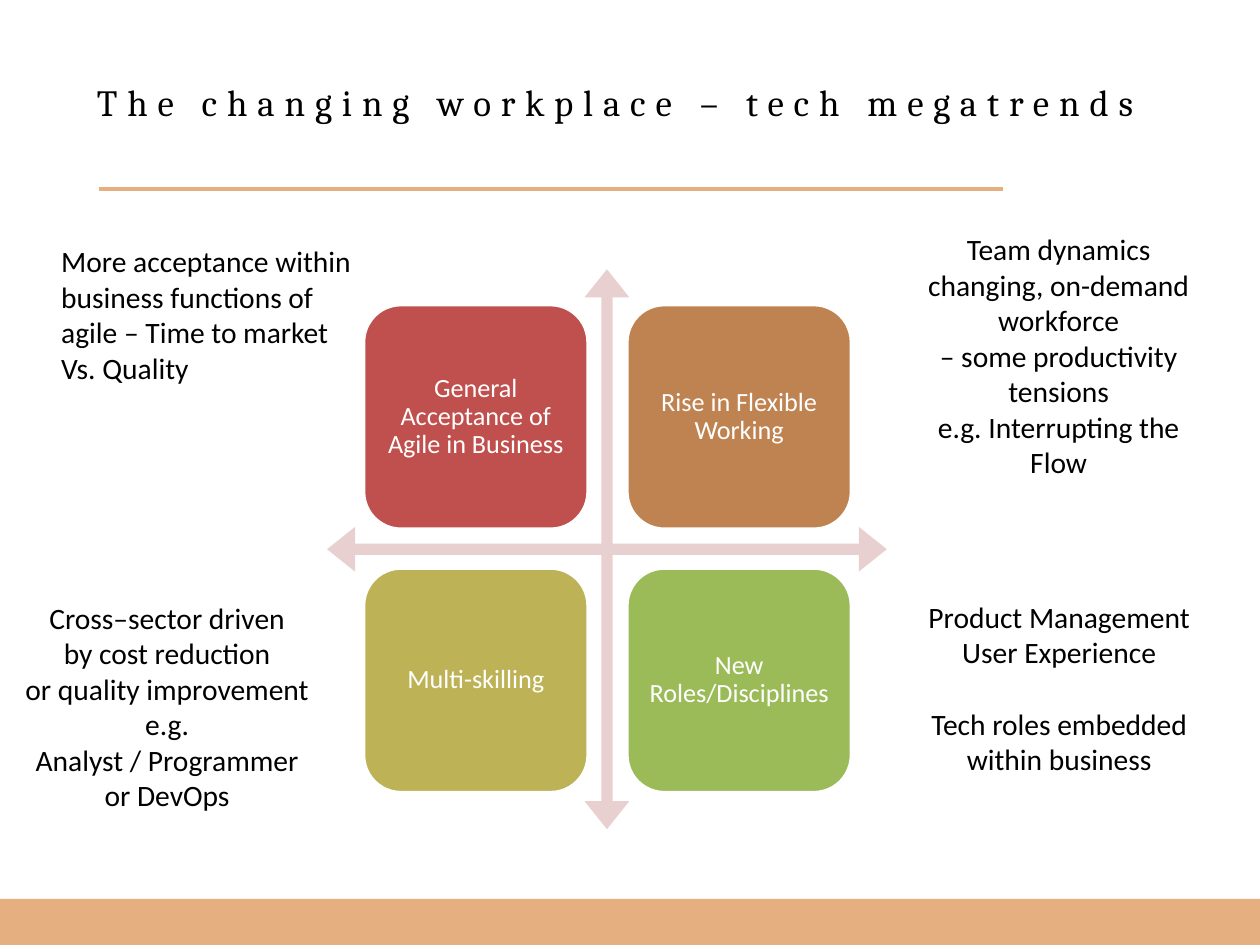
from lxml.etree import SubElement
from pptx import Presentation
from pptx.dml.color import RGBColor
from pptx.enum.shapes import MSO_CONNECTOR, MSO_SHAPE
from pptx.enum.text import MSO_ANCHOR, PP_ALIGN
from pptx.oxml.ns import qn
from pptx.util import Pt

PIXEL = 9144
COLORS = {
    "band": "E6AF80",
    "text": "000000",
    "white": "FFFFFF",
    "arrow": "E8D0D0",
    "red": "C0504D",
    "brown": "BE8351",
    "olive": "BDB255",
    "green": "9BBB59",
}


def color(name):
    return RGBColor.from_string(COLORS[name])


def set_values(target, values):
    for name, value in values.items():
        setattr(target, name, value)


def margins(left, top, right, bottom):
    names = ("margin_left", "margin_top", "margin_right", "margin_bottom")
    return {name: value * PIXEL for name, value in zip(names, (left, top, right, bottom))}


class SlideBuilder:
    """Hold the slide and its style, and draw each kind of element."""

    title_font = {"name": "Cambria", "size": Pt(22.5), "bold": False}
    note_font = {"name": "Calibri", "size": Pt(18)}
    tile_font = {"name": "Calibri", "size": Pt(16)}

    def __init__(self, slide):
        self.slide = slide

    def box(self, *lengths):
        return [length * PIXEL for length in lengths]

    def format_text(self, paragraph, text, font, font_color, layout):
        paragraph.text = text
        set_values(paragraph, layout)
        for run in paragraph.runs:
            set_values(run.font, font)
            run.font.color.rgb = color(font_color)

    def title(self, text, left, top, width, height):
        shape = self.slide.shapes.title
        shape.left, shape.top, shape.width, shape.height = self.box(left, top, width, height)
        frame = shape.text_frame
        set_values(frame, {"word_wrap": True, "vertical_anchor": MSO_ANCHOR.TOP, **margins(0, 2, 0, 0)})
        paragraph = frame.paragraphs[0]
        layout = {"alignment": PP_ALIGN.LEFT, "space_before": Pt(1.1)}
        self.format_text(paragraph, text, self.title_font, "text", layout)
        for run in paragraph.runs:
            run.font._element.set("spc", "600")

    def shape(self, kind, fill, left, top, width, height):
        shape = self.slide.shapes.add_shape(kind, *self.box(left, top, width, height))
        shape.shadow.inherit = False
        shape.fill.solid()
        shape.fill.fore_color.rgb = color(fill)
        shape.line.fill.background()
        return shape

    def rule(self, left, top, right):
        ends = self.box(left, top, right, top)
        connector = self.slide.shapes.add_connector(MSO_CONNECTOR.STRAIGHT, *ends)
        connector.line.color.rgb = color("band")
        connector.line.width = Pt(3)
        SubElement(connector._element.spPr, qn("a:effectLst"))

    def arrows(self, left, top, size):
        shape = self.shape(MSO_SHAPE.QUAD_ARROW, "arrow", left, top, size, size)
        for index, value in enumerate((0.02, 0.04, 0.05)):
            shape.adjustments[index] = value

    def tile(self, text, fill, left, top, size):
        shape = self.shape(MSO_SHAPE.ROUNDED_RECTANGLE, fill, left, top, size, size)
        shape.line.color.rgb = color("white")
        shape.line.width = Pt(2)
        frame = shape.text_frame
        set_values(frame, {"word_wrap": True, "vertical_anchor": MSO_ANCHOR.MIDDLE, **margins(7, 7, 7, 7)})
        layout = {"alignment": PP_ALIGN.CENTER, "line_spacing": 0.9}
        self.format_text(frame.paragraphs[0], text, self.tile_font, "white", layout)

    def note(self, texts, alignment, left, top, width, height, last_gap=0):
        shape = self.slide.shapes.add_textbox(*self.box(left, top, width, height))
        frame = shape.text_frame
        frame.word_wrap = True
        for index, text in enumerate(texts):
            paragraph = frame.add_paragraph() if index else frame.paragraphs[0]
            self.format_text(paragraph, text, self.note_font, "text", {"alignment": alignment})
        frame.paragraphs[-1].space_before = Pt(last_gap)


def main():
    presentation = Presentation()
    presentation.slide_width = 1067 * PIXEL
    presentation.slide_height = 800 * PIXEL
    slide = presentation.slides.add_slide(presentation.slide_layouts[5])
    builder = SlideBuilder(slide)

    builder.shape(MSO_SHAPE.RECTANGLE, "band", 0, 761, 1067, 39)
    builder.rule(84, 160, 849)
    builder.title("The changing workplace – tech megatrends", 82, 65, 985, 39)

    notes = [
        (["Team dynamics\nchanging, on-demand workforce",
          "– some productivity tensions\ne.g. Interrupting the Flow"],
         PP_ALIGN.CENTER, 759, 191, 275, 222),
        (["More acceptance within\nbusiness functions of\nagile – Time to market\nVs. Quality"],
         PP_ALIGN.LEFT, 42, 201, 274, 131),
        (["Cross–sector driven\nby cost reduction\nor quality improvement", "e.g.",
          "Analyst / Programmer\nor DevOps"],
         PP_ALIGN.CENTER, 7, 503, 269, 192),
        (["Product Management", "User Experience", "Tech roles embedded\nwithin business"],
         PP_ALIGN.CENTER, 772, 502, 250, 162, 22),
    ]
    for note in notes:
        builder.note(*note)

    builder.arrows(277, 228, 474)
    tiles = [
        ("General Acceptance of Agile in Business", "red"),
        ("Rise in Flexible Working", "brown"),
        ("Multi-skilling", "olive"),
        ("New Roles/Disciplines", "green"),
    ]
    for index, (text, fill) in enumerate(tiles):
        row, column = divmod(index, 2)
        builder.tile(text, fill, 308 + 223 * column, 258 + 223 * row, 190)

    presentation.save("out.pptx")


if __name__ == "__main__":
    main()
